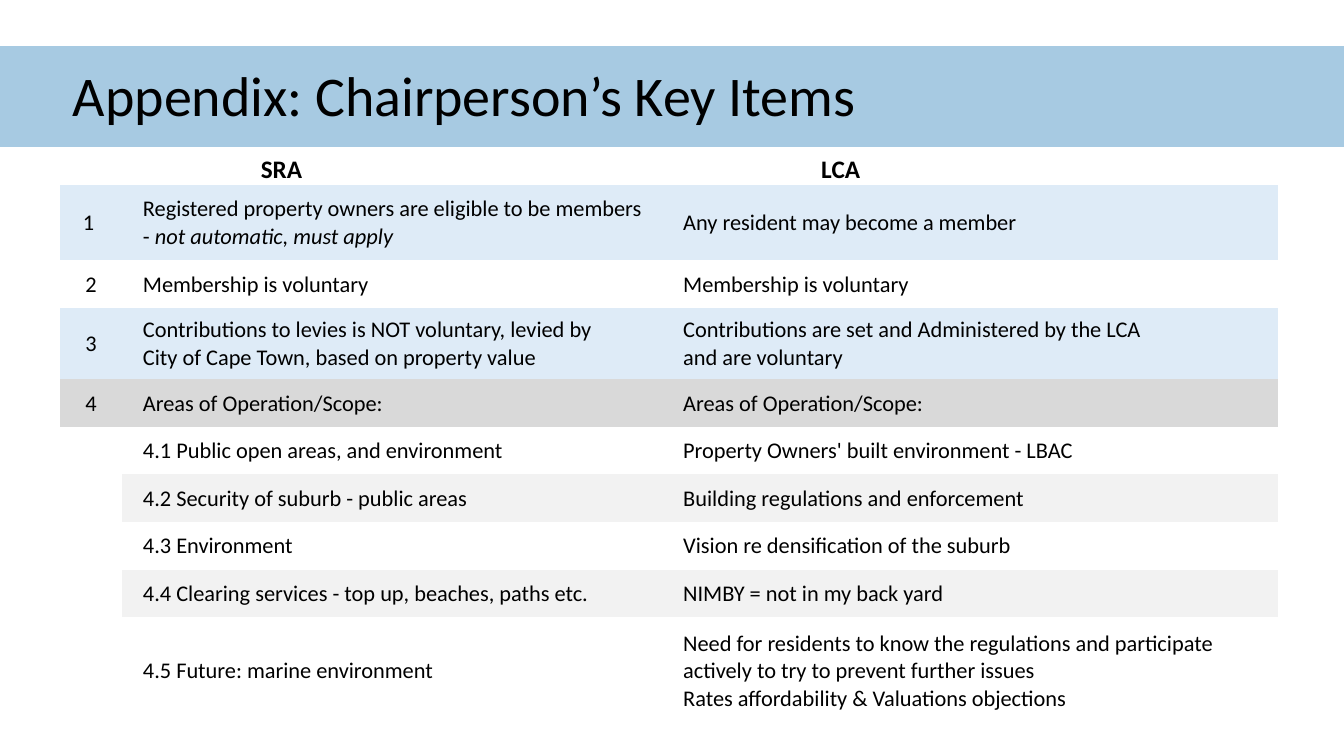
from dataclasses import dataclass

from lxml.etree import SubElement
from pptx import Presentation
from pptx.dml.color import RGBColor as Rgb
from pptx.enum.shapes import MSO_SHAPE as Shape
from pptx.enum.text import MSO_ANCHOR as Anchor, PP_ALIGN as Align
from pptx.oxml.ns import qn
from pptx.util import Pt


@dataclass(frozen=True)
class Theme:
    """Colours, font and type sizes of the slide."""
    font: str = "Calibri"
    ink: str = "000000"
    band: str = "3C8AC0"
    band_alpha: int = 45
    key: str = "DEEBF7"
    section: str = "D9D9D9"
    stripe: str = "F2F2F2"
    title_size: int = 40
    heading_size: int = 18
    body_size: int = 16


NO_GRID_STYLE = "{2D5ABB26-0587-4C30-8999-92F81FD0307C}"
COLUMN_WIDTHS = (44, 400.3, 425.5)
HEADING_INDENT, ITEM_INDENT = 98.6, 14.4


def write(frame, text, theme, size, bold=False, align=Align.LEFT, indent=0, spacing=None):
    """Fill a text frame, one paragraph per line, with *starred* parts in italics."""
    for number, line in enumerate(text.split("\n")):
        paragraph = frame.add_paragraph() if number else frame.paragraphs[0]
        paragraph.alignment = align
        paragraph.line_spacing = spacing
        if indent:
            paragraph._p.get_or_add_pPr().set("marL", str(Pt(indent)))
        for position, part in enumerate(line.split("*")):
            if part:
                run = paragraph.add_run()
                run.text = part
                font = run.font
                font.name, font.size, font.bold = theme.font, Pt(size), bold
                font.italic = position % 2 == 1
                font.color.rgb = Rgb.from_string(theme.ink)


class SlideBuilder:
    """Draws elements on one slide in a shared style."""

    def __init__(self, slide, theme):
        """Keep the slide and its theme."""
        self.slide, self.theme = slide, theme

    def band(self, left, top, width, height):
        """Draw the translucent title band."""
        band = self.slide.shapes.add_shape(
            Shape.RECTANGLE, Pt(left), Pt(top), Pt(width), Pt(height))
        band.shadow.inherit = False
        band.line.fill.background()
        band.fill.solid()
        band.fill.fore_color.rgb = Rgb.from_string(self.theme.band)
        colour = next(band.element.spPr.iter(qn("a:srgbClr")))
        SubElement(colour, qn("a:alpha")).set("val", str(self.theme.band_alpha * 1000))

    def title(self, text, left, top, width, height):
        """Write the slide title."""
        frame = self.slide.shapes.add_textbox(
            Pt(left), Pt(top), Pt(width), Pt(height)).text_frame
        frame.word_wrap = True
        frame.vertical_anchor = Anchor.MIDDLE
        write(frame, text, self.theme, self.theme.title_size, spacing=0.9)

    def table(self, rows, left, top):
        """Lay out the comparison from rows of height, fill and three texts."""
        graphic = self.slide.shapes.add_table(
            len(rows), len(COLUMN_WIDTHS), Pt(left), Pt(top),
            Pt(sum(COLUMN_WIDTHS)), Pt(sum(row[0] for row in rows)))
        next(graphic.element.iter(qn("a:tableStyleId"))).text = NO_GRID_STYLE
        table = graphic.table
        table.first_row = table.horz_banding = False
        for column, width in zip(table.columns, COLUMN_WIDTHS):
            column.width = Pt(width)
        for r, (height, fill, *texts) in enumerate(rows):
            table.rows[r].height = Pt(height)
            for c, text in enumerate(texts):
                self.cell(table.cell(r, c), text, fill if text else None,
                          heading=r == 0, column=c)

    def cell(self, cell, text, fill, heading, column):
        """Style and fill one table cell."""
        cell.margin_left = cell.margin_right = cell.margin_top = Pt(0.75)
        cell.margin_bottom = 0
        cell.vertical_anchor = Anchor.MIDDLE
        if fill:
            cell.fill.solid()
            cell.fill.fore_color.rgb = Rgb.from_string(fill)
        else:
            cell.fill.background()
        item_indent = ITEM_INDENT if column == 1 else 0
        write(cell.text_frame, text, self.theme, bold=heading,
              size=self.theme.heading_size if heading else self.theme.body_size,
              align=Align.LEFT if column else Align.CENTER,
              indent=HEADING_INDENT if heading and column else item_indent)


def main():
    """Build and save the slide."""
    theme = Theme()
    deck = Presentation()
    deck.slide_width, deck.slide_height = Pt(960), Pt(540)
    builder = SlideBuilder(deck.slides.add_slide(deck.slide_layouts[6]), theme)
    builder.band(0, 33, 960, 72)
    builder.title("Appendix: Chairperson’s Key Items", 45, 37.5, 828, 65.5)
    scope = "Areas of Operation/Scope:"
    voluntary = "Membership is voluntary"
    builder.table([
        (21, None, "", "SRA", "LCA"),
        (54, theme.key, "1 ",
         "Registered property owners are eligible to be members\n"
         "- *not automatic, must apply*",
         "Any resident may become a member"),
        (34, None, "2", voluntary, voluntary),
        (51, theme.key, "3",
         "Contributions to levies is NOT voluntary, levied by\n"
         "City of Cape Town, based on property value",
         "Contributions are set and Administered by the LCA\nand are voluntary"),
        (34, theme.section, "4", scope, scope),
        (34, None, "", "4.1 Public open areas, and environment",
         "Property Owners' built environment - LBAC"),
        (34, theme.stripe, "", "4.2 Security of suburb - public areas",
         "Building regulations and enforcement"),
        (34, None, "", "4.3 Environment", "Vision re densification of the suburb"),
        (34, theme.stripe, "", "4.4 Clearing services - top up, beaches, paths etc.",
         "NIMBY = not in my back yard"),
        (76.5, None, "", "4.5 Future: marine environment",
         "Need for residents to know the regulations and participate "
         "actively to try to prevent further issues\n"
         "Rates affordability & Valuations objections"),
    ], 43, 109.5)
    deck.save("out.pptx")


if __name__ == "__main__":
    main()
